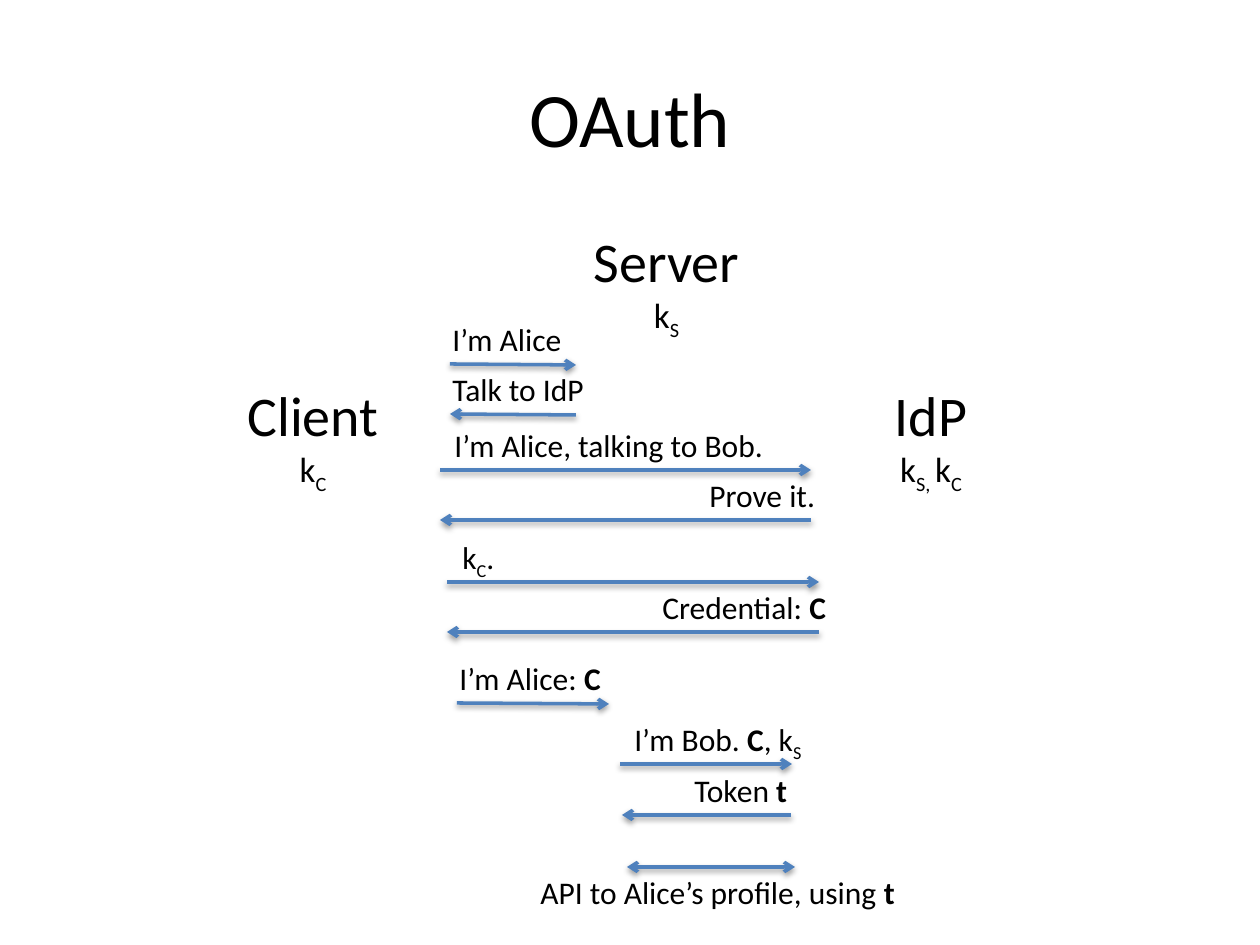
import lxml.etree
import pptx
import pptx.dml.color
import pptx.enum.shapes
import pptx.enum.text
import pptx.oxml
import pptx.oxml.ns
import pptx.util

EMU_PER_PX = 914400 / 126
FONT = "Calibri"
BLACK = "000000"
BLUE = "4F81BD"
CAPTION_HEIGHT = 50
ROLE_HEIGHT = 124
CENTER = pptx.enum.text.PP_ALIGN.CENTER
LEFT = pptx.enum.text.PP_ALIGN.LEFT

# Text pieces: (text, style)
PLAIN, BOLD, SUB = "plain", "bold", "sub"


def px(length):
    return pptx.util.Emu(round(length * EMU_PER_PX))


def color(hex_string):
    return pptx.dml.color.RGBColor.from_string(hex_string)


class Diagram:
    def __init__(self, presentation):
        self.slide = presentation.slides.add_slide(presentation.slide_layouts[5])

    def run(self, paragraph, text, size, style=PLAIN):
        run = paragraph.add_run()
        run.text = text
        run.font.name = FONT
        run.font.size = pptx.util.Pt(size)
        run.font.color.rgb = color(BLACK)
        if style == BOLD:
            run.font.bold = True
        elif style == SUB:
            run.font._element.set("baseline", "-25000")

    def title(self, text, left, top, width, height):
        shape = self.slide.shapes.title
        shape.left, shape.top = px(left), px(top)
        shape.width, shape.height = px(width), px(height)
        shape.text_frame.vertical_anchor = pptx.enum.text.MSO_ANCHOR.MIDDLE
        paragraph = shape.text_frame.paragraphs[0]
        paragraph.alignment = CENTER
        self.run(paragraph, text, 44)

    def text_box(self, left, top, width, height, alignment):
        shape = self.slide.shapes.add_textbox(px(left), px(top), px(width), px(height))
        shape.text_frame.word_wrap = True
        shape.text_frame.auto_size = pptx.enum.text.MSO_AUTO_SIZE.SHAPE_TO_FIT_TEXT
        paragraph = shape.text_frame.paragraphs[0]
        paragraph.alignment = alignment
        return paragraph

    def role(self, name, keys, left, top, width):
        paragraph = self.text_box(left, top, width, ROLE_HEIGHT, CENTER)
        self.run(paragraph, name, 32)
        paragraph.add_line_break()
        for text, style in keys:
            self.run(paragraph, text, 20, style)

    def caption(self, pieces, left, top, width):
        paragraph = self.text_box(left, top, width, CAPTION_HEIGHT, LEFT)
        for text, style in pieces:
            self.run(paragraph, text, 18, style)

    def arrow(self, x1, y1, x2, y2, ends):
        connector = self.slide.shapes.add_connector(
            pptx.enum.shapes.MSO_CONNECTOR.STRAIGHT, px(x1), px(y1), px(x2), px(y2))
        connector.line.color.rgb = color(BLUE)
        connector.line.width = pptx.util.Pt(2)
        line = connector.line._get_or_add_ln()
        for end in ends:
            lxml.etree.SubElement(line, pptx.oxml.ns.qn(f"a:{end}"), type="arrow")
        connector._element.spPr.append(pptx.oxml.parse_xml(
            f'<a:effectLst {pptx.oxml.ns.nsdecls("a")}>'
            '<a:outerShdw blurRad="40000" dist="20000" dir="5400000" rotWithShape="0">'
            f'<a:srgbClr val="{BLACK}"><a:alpha val="38000"/></a:srgbClr>'
            '</a:outerShdw></a:effectLst>'))


RIGHTWARD, LEFTWARD, BOTH = ["tailEnd"], ["headEnd"], ["headEnd", "tailEnd"]

# Name, keys, left, top, width
ROLES = [
    ("Client", [("k", PLAIN), ("C", SUB)], 234, 374, 158),
    ("Server", [("k", PLAIN), ("S", SUB)], 576, 220, 181),
    ("IdP", [("k", PLAIN), ("S, ", SUB), ("k", PLAIN), ("C", SUB)], 852, 374, 158),
]

# Arrow (x1, y1, x2, y2), ends, caption pieces, caption left and width
MESSAGES = [
    ((450, 364, 576, 365), RIGHTWARD, [("I’m Alice", PLAIN)], 440, 271),
    ((450, 414, 576, 415), LEFTWARD, [("Talk to IdP", PLAIN)], 440, 271),
    ((440, 470, 811, 470), RIGHTWARD, [("I’m Alice, talking to Bob.", PLAIN)], 442, 345),
    ((440, 520, 811, 520), LEFTWARD, [("Prove it.", PLAIN)], 697, 135),
    ((447, 582, 819, 582), RIGHTWARD, [("k", PLAIN), ("C", SUB), (".", PLAIN)], 450, 345),
    ((447, 632, 819, 632), LEFTWARD, [("Credential: ", PLAIN), ("C", BOLD)], 650, 191),
    ((457, 703, 609, 704), RIGHTWARD, [("I’m Alice: ", PLAIN), ("C", BOLD)], 447, 321),
    ((620, 764, 792, 764), RIGHTWARD,
     [("I’m Bob. ", PLAIN), ("C", BOLD), (", k", PLAIN), ("S", SUB)], 622, 430),
    ((622, 815, 791, 815), LEFTWARD, [("Token ", PLAIN), ("t", BOLD)], 682, 147),
]


def main():
    presentation = pptx.Presentation()
    presentation.slide_width, presentation.slide_height = px(1260), px(945)
    diagram = Diagram(presentation)
    diagram.title("OAuth", 63, 38, 1134, 158)

    # Parties and the keys they hold
    for role in ROLES:
        diagram.role(*role)

    # Messages, each captioned above its arrow
    for ends_at, ends, pieces, left, width in MESSAGES:
        diagram.arrow(*ends_at, ends)
        diagram.caption(pieces, left, ends_at[1] - CAPTION_HEIGHT, width)

    # Final exchange, captioned below its arrow
    diagram.arrow(627, 867, 795, 867, BOTH)
    diagram.caption([("API to Alice’s profile, using ", PLAIN), ("t", BOLD)], 528, 867, 499)

    presentation.save("out.pptx")


if __name__ == "__main__":
    main()
